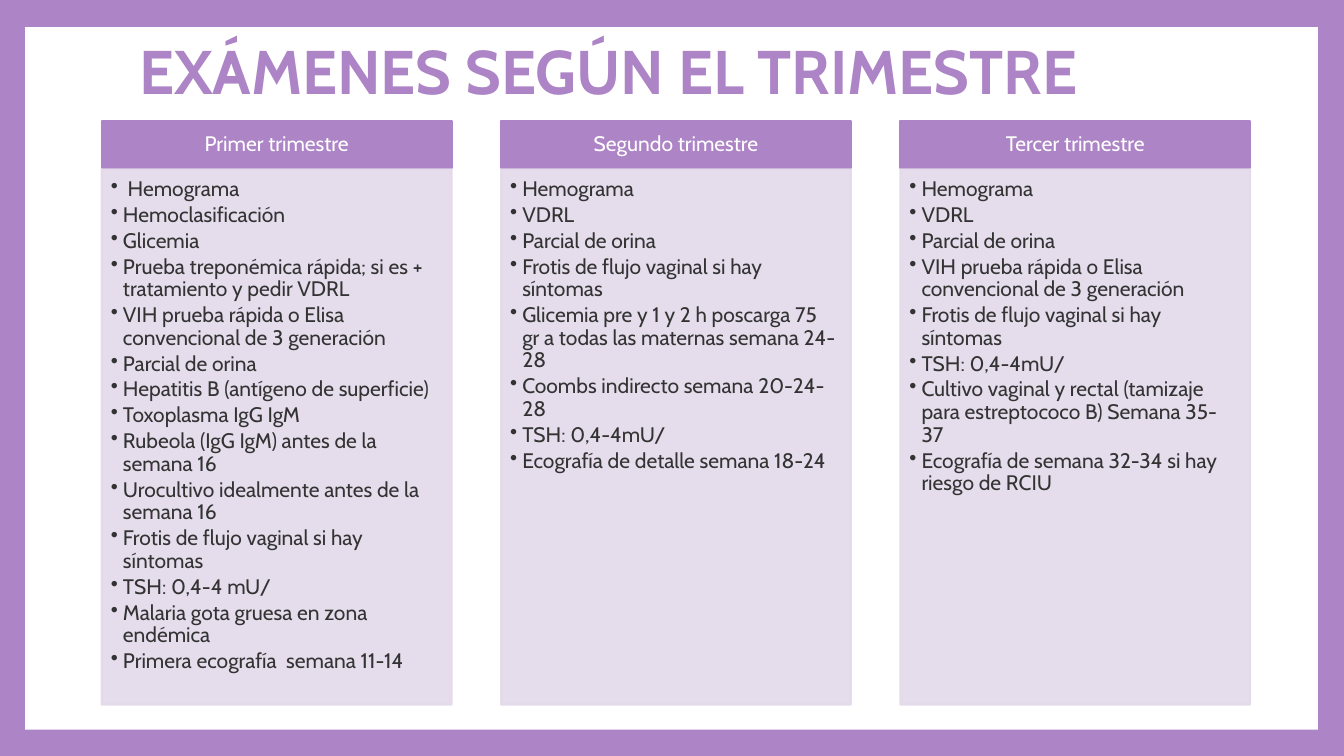
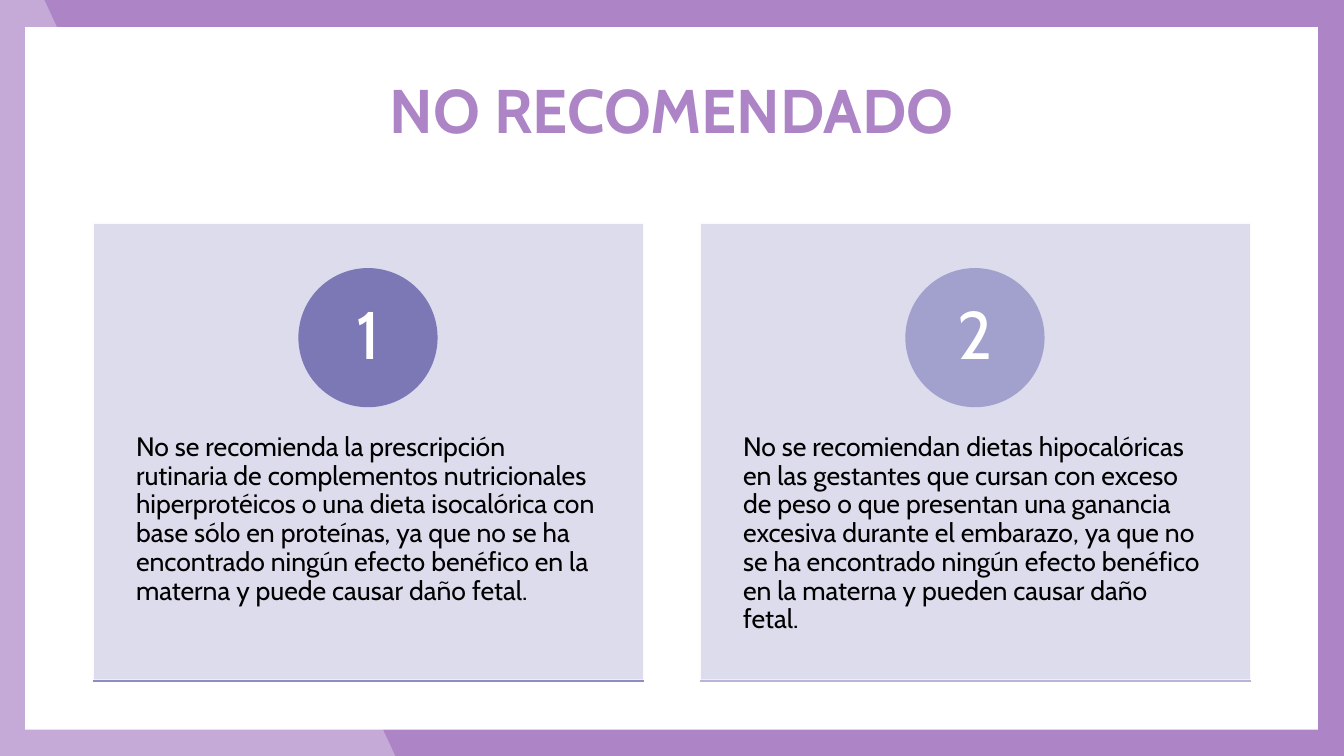
from dataclasses import dataclass

from lxml.etree import SubElement
from pptx import Presentation
from pptx.dml.color import RGBColor
from pptx.enum.shapes import MSO_CONNECTOR, MSO_SHAPE
from pptx.enum.text import MSO_ANCHOR, MSO_AUTO_SIZE, PP_ALIGN
from pptx.oxml.ns import qn
from pptx.util import Pt

PX = 9144


@dataclass(frozen=True)
class Theme:
    font: str = "Cabin"
    purple: str = "AD84C6"
    lilac: str = "E3D9EA"
    lavender: str = "D9D9EB"
    white: str = "FFFFFF"
    black: str = "000000"
    grey: str = "333333"
    circles: tuple = ("7B78B5", "A2A1CE")
    rules: tuple = ("8E8CC2", "B7B6DA")
    title_size: int = 44
    exam_size: int = 15
    advice_size: int = 19
    number_size: int = 48
    line_width: float = 1.5


theme = Theme()


def add_block(page, kind, box, fill, line, opacity=100):
    shape = page.shapes.add_shape(kind, *[length * PX for length in box])
    shape.shadow.inherit = False
    shape.fill.solid()
    shape.fill.fore_color.rgb = RGBColor.from_string(fill)
    shape.line.color.rgb = RGBColor.from_string(line)
    shape.line.width = Pt(theme.line_width)
    if opacity < 100:
        for color in shape.element.spPr.iter(qn("a:srgbClr")):
            SubElement(color, qn("a:alpha"), val=str(opacity * 1000))
    return shape


def write(shape, lines, size, color, align=PP_ALIGN.LEFT, anchor=MSO_ANCHOR.MIDDLE,
          insets=(10, 5, 10, 5), bold=False, bullet=False):
    frame = shape.text_frame
    frame.word_wrap = True
    frame.auto_size = MSO_AUTO_SIZE.NONE
    frame.vertical_anchor = anchor
    frame.margin_left, frame.margin_top, frame.margin_right, frame.margin_bottom = [
        inset * PX for inset in insets]
    frame.text = "\n".join(lines)
    for para in frame.paragraphs:
        if bullet:
            properties = para._p.get_or_add_pPr()
            properties.set("marL", str(12 * PX))
            properties.set("indent", str(-12 * PX))
            SubElement(properties, qn("a:buChar"), char="•")
            para.space_after = Pt(size * 0.15)
        para.alignment = align
        para.line_spacing = 0.9
        para.font.name = theme.font
        para.font.size = Pt(size)
        para.font.bold = bold
        para.font.color.rgb = RGBColor.from_string(color)


deck = Presentation()
deck.slide_width = 1333 * PX
deck.slide_height = 750 * PX
layout = deck.slide_layouts[5]
layout.background.fill.solid()
layout.background.fill.fore_color.rgb = RGBColor.from_string(theme.purple)

titles = [
    ("EXÁMENES SEGÚN EL TRIMESTRE", (128, 0, 1080, 148), PP_ALIGN.LEFT),
    ("NO RECOMENDADO", (91, 40, 1151, 145), PP_ALIGN.CENTER),
]
for text, box, align in titles:
    page = deck.slides.add_slide(layout)
    title = page.shapes.title
    title.left, title.top, title.width, title.height = [length * PX for length in box]
    write(title, [text], theme.title_size, theme.purple, align, bold=True)
exams_page, advice_page = deck.slides

panel = add_block(exams_page, MSO_SHAPE.RECTANGLE, (25, 27, 1282, 697), theme.white, theme.white)
panel.line.fill.background()
panel.element.nvSpPr.cNvPr.id = 99
layout.shapes.element.insert(2, panel.element)

trimesters = {
    "Primer trimestre": [
        " Hemograma",
        "Hemoclasificación",
        "Glicemia",
        "Prueba treponémica rápida; si es + tratamiento y pedir VDRL",
        "VIH prueba rápida o Elisa convencional de 3 generación",
        "Parcial de orina",
        "Hepatitis B (antígeno de superficie)",
        "Toxoplasma IgG IgM",
        "Rubeola (IgG IgM) antes de la semana 16",
        "Urocultivo idealmente antes de la semana 16",
        "Frotis de flujo vaginal si hay síntomas",
        "TSH: 0,4-4 mU/",
        "Malaria gota gruesa en zona endémica",
        "Primera ecografía  semana 11-14",
    ],
    "Segundo trimestre": [
        "Hemograma",
        "VDRL",
        "Parcial de orina",
        "Frotis de flujo vaginal si hay síntomas",
        "Glicemia pre y 1 y 2 h poscarga 75 gr a todas las maternas semana 24-28",
        "Coombs indirecto semana 20-24-28",
        "TSH: 0,4-4mU/",
        "Ecografía de detalle semana 18-24",
    ],
    "Tercer trimestre": [
        "Hemograma",
        "VDRL",
        "Parcial de orina",
        "VIH prueba rápida o Elisa convencional de 3 generación",
        "Frotis de flujo vaginal si hay síntomas",
        "TSH: 0,4-4mU/",
        "Cultivo vaginal y rectal (tamizaje para estreptococo B) Semana 35-37",
        "Ecografía de semana 32-34 si hay riesgo de RCIU",
    ],
}
for column, (heading, exams) in enumerate(trimesters.items()):
    left = 101 + column * 396
    header = add_block(exams_page, MSO_SHAPE.RECTANGLE, (left, 120, 347, 47),
                       theme.purple, theme.purple)
    write(header, [heading], theme.exam_size, theme.white, PP_ALIGN.CENTER,
          insets=(12, 7, 12, 7))
    body = add_block(exams_page, MSO_SHAPE.RECTANGLE, (left, 168, 347, 531),
                     theme.lilac, theme.lilac, opacity=90)
    write(body, exams, theme.exam_size, theme.grey, anchor=MSO_ANCHOR.TOP,
          insets=(9, 9, 12, 13), bullet=True)

outline = advice_page.shapes.build_freeform(0, 0, scale=PX)
outline.add_line_segments([(44, 0), (392, 750), (0, 750)], close=True)
wedge = outline.convert_to_shape()
wedge.shadow.inherit = False
wedge.fill.solid()
wedge.fill.fore_color.rgb = RGBColor.from_string(theme.white)
SubElement(wedge.element.spPr.find(".//" + qn("a:srgbClr")), qn("a:alpha"), val="30000")
wedge.line.fill.background()

advice = [
    "No se recomienda la prescripción rutinaria de complementos nutricionales hiperprotéicos "
    "o una dieta isocalórica con base sólo en proteínas, ya que no se ha encontrado ningún "
    "efecto benéfico en la materna y puede causar daño fetal.",
    "No se recomiendan dietas hipocalóricas en las gestantes que cursan con exceso de peso "
    "o que presentan una ganancia excesiva durante el embarazo, ya que no se ha encontrado "
    "ningún efecto benéfico en la materna y pueden causar daño fetal.",
]
card_width, circle_size = 547, 136
for index, text in enumerate(advice):
    left = 92 + index * 602
    card = add_block(advice_page, MSO_SHAPE.RECTANGLE, (left, 221, card_width, 454),
                     theme.lavender, theme.white, opacity=90)
    write(card, [text], theme.advice_size, theme.black, anchor=MSO_ANCHOR.TOP,
          insets=(43, 209, 43, 36))
    circle_left = left + (card_width - circle_size) // 2
    circle = add_block(advice_page, MSO_SHAPE.OVAL, (circle_left, 267, circle_size, circle_size),
                       theme.circles[index], theme.circles[index])
    write(circle, [str(index + 1)], theme.number_size, theme.white, PP_ALIGN.CENTER,
          insets=(11, 1, 11, 1))
    rule = advice_page.shapes.add_connector(
        MSO_CONNECTOR.STRAIGHT, left * PX, 676 * PX, (left + card_width) * PX, 676 * PX)
    rule.line.color.rgb = RGBColor.from_string(theme.rules[index])
    rule.line.width = Pt(theme.line_width)
    SubElement(rule.element.spPr, qn("a:effectLst"))

deck.save("out.pptx")
